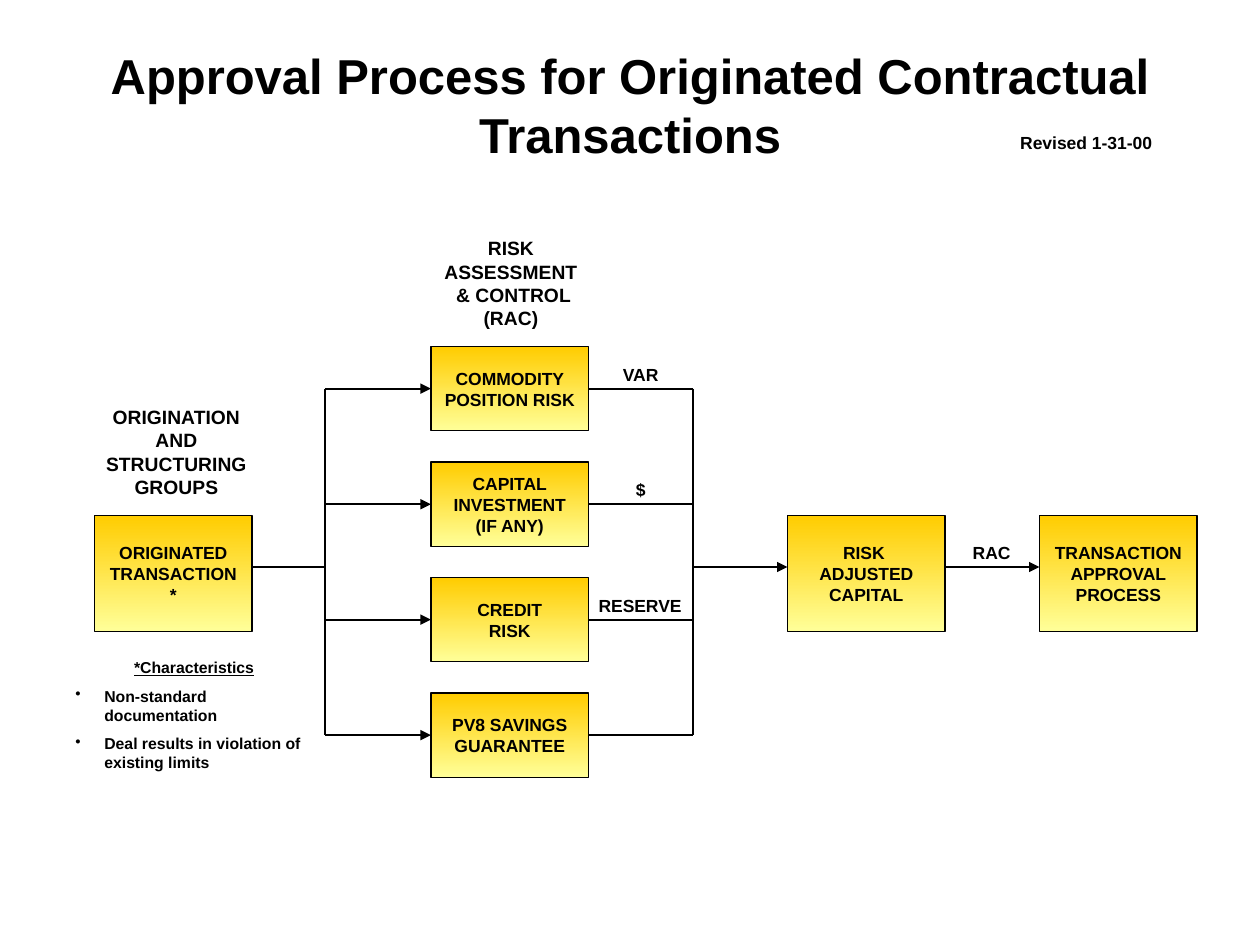
from dataclasses import dataclass

from lxml import etree
from pptx import Presentation
from pptx.dml.color import RGBColor
from pptx.enum.shapes import MSO_CONNECTOR, MSO_SHAPE
from pptx.enum.text import MSO_ANCHOR, MSO_AUTO_SIZE, PP_ALIGN
from pptx.oxml.ns import qn
from pptx.util import Inches, Pt

CENTER, LEFT = PP_ALIGN.CENTER, PP_ALIGN.LEFT
TOP, MIDDLE = MSO_ANCHOR.TOP, MSO_ANCHOR.MIDDLE
STRAIGHT = MSO_CONNECTOR.STRAIGHT
RECTANGLE = MSO_SHAPE.RECTANGLE
RIGHT_SIDE, LEFT_SIDE = 3, 1


@dataclass(frozen=True)
class Theme:
    font: str = "Arial"
    ink: RGBColor = RGBColor(0, 0, 0)
    box_top: RGBColor = RGBColor(0xFF, 0xCC, 0x00)
    box_bottom: RGBColor = RGBColor(0xFF, 0xFF, 0x99)
    title: Pt = Pt(28)
    heading: Pt = Pt(11)
    label: Pt = Pt(10)
    note: Pt = Pt(9)
    box_line: Pt = Pt(0.75)
    flow_line: Pt = Pt(1)


theme = Theme()


def write(shape, lines, size, anchor=TOP, wrap=True):
    """Fill a shape with bold centred lines, one paragraph each."""
    frame = shape.text_frame
    frame.text = "\n".join(lines)
    frame.word_wrap = wrap
    frame.auto_size = MSO_AUTO_SIZE.NONE
    frame.vertical_anchor = anchor
    for paragraph in frame.paragraphs:
        paragraph.alignment = CENTER
        paragraph.font.name = theme.font
        paragraph.font.size = size
        paragraph.font.bold = True
        paragraph.font.color.rgb = theme.ink
    return frame


def add_line(x1, y1, x2, y2, arrow=False):
    line = slide.shapes.add_connector(
        STRAIGHT, Inches(x1), Inches(y1), Inches(x2), Inches(y2))
    line.line.color.rgb = theme.ink
    line.line.width = theme.flow_line
    if arrow:
        etree.SubElement(line.line._ln, qn("a:tailEnd"), type="triangle")
    etree.SubElement(line._element.spPr, qn("a:effectLst"))
    return line


presentation = Presentation()
presentation.slide_width = Inches(10)
presentation.slide_height = Inches(7.5)
slide = presentation.slides.add_slide(presentation.slide_layouts[5])

# Title
title = slide.shapes.title
title.left, title.top = Inches(0.39), Inches(0.24)
title.width, title.height = Inches(9.22), Inches(1.18)
write(title, ["Approval Process for Originated Contractual Transactions"],
      theme.title, MIDDLE)

# Boxes: four risk rows between two buses, and three steps on the main line
BOX_WIDTH, RISK_HEIGHT, STEP_HEIGHT = 1.25, 0.67, 0.92
RISK_LEFT, RISK_TOP, RISK_PITCH = 3.42, 2.75, 2.75 / 3
STEP_TOP, FLOW_Y = 4.09, 4.5
LEFT_BUS, RIGHT_BUS = 2.58, 5.5

risks = [
    ["COMMODITY POSITION RISK"],
    ["CAPITAL", "INVESTMENT", "(IF ANY)"],
    ["CREDIT", "RISK"],
    ["PV8 SAVINGS GUARANTEE"],
]
steps = [
    (0.75, ["ORIGINATED", "TRANSACTION*"]),
    (6.25, ["RISK ", "ADJUSTED", "CAPITAL"]),
    (8.25, ["TRANSACTION", "APPROVAL", "PROCESS"]),
]
boxes = [(RISK_LEFT, RISK_TOP + row * RISK_PITCH, RISK_HEIGHT, lines)
         for row, lines in enumerate(risks)]
boxes += [(left, STEP_TOP, STEP_HEIGHT, lines) for left, lines in steps]

box_shapes = []
for left, top, height, lines in boxes:
    box = slide.shapes.add_shape(
        RECTANGLE, Inches(left), Inches(top), Inches(BOX_WIDTH), Inches(height))
    box.shadow.inherit = False
    box.fill.gradient()
    box.fill.gradient_angle = 270
    first_stop, last_stop = box.fill.gradient_stops
    first_stop.position, last_stop.position = 0, 1
    first_stop.color.rgb = theme.box_top
    last_stop.color.rgb = theme.box_bottom
    box.line.color.rgb = theme.ink
    box.line.width = theme.box_line
    write(box, lines, theme.label, MIDDLE)
    box_shapes.append(box)

# Flow lines
risk_shapes = box_shapes[:len(risks)]
risk_centers = [RISK_TOP + row * RISK_PITCH + RISK_HEIGHT / 2
                for row in range(len(risks))]
for box, y in zip(risk_shapes, risk_centers):
    inflow = add_line(LEFT_BUS, y, RISK_LEFT, y, arrow=True)
    inflow.end_connect(box, LEFT_SIDE)
    outflow = add_line(RISK_LEFT + BOX_WIDTH, y, RIGHT_BUS, y)
    outflow.begin_connect(box, RIGHT_SIDE)
for bus in (LEFT_BUS, RIGHT_BUS):
    add_line(bus, risk_centers[0], bus, risk_centers[-1])
add_line(2, FLOW_Y, LEFT_BUS, FLOW_Y)
add_line(RIGHT_BUS, FLOW_Y, 6.25, FLOW_Y, arrow=True)
add_line(7.5, FLOW_Y, 8.25, FLOW_Y, arrow=True)

# Headings and line labels
texts = [
    (3.36, 1.83, 1.39, 0.84, theme.heading,
     ["RISK ASSESSMENT", " & CONTROL", "(RAC)"]),
    (0.71, 3.17, 1.38, 0.84, theme.heading,
     ["ORIGINATION", "AND", "STRUCTURING", "GROUPS"]),
    (8, 1, 1.24, 0.27, theme.label, ["Revised 1-31-00"]),
    (4.67, 2.84, 0.83, 0.27, theme.label, ["VAR"]),
    (4.67, 3.75, 0.83, 0.27, theme.label, ["$"]),
    (4.58, 4.67, 1, 0.27, theme.label, ["RESERVE"]),
    (7.58, 4.25, 0.58, 0.27, theme.label, ["RAC"]),
]
for left, top, width, height, size, lines in texts:
    text_box = slide.shapes.add_textbox(
        Inches(left), Inches(top), Inches(width), Inches(height))
    write(text_box, lines, size, wrap=size == theme.heading)

# Footnote with bullets
footnote = slide.shapes.add_textbox(
    Inches(0.5), Inches(5.17), Inches(2.08), Inches(0.86))
heading, *bullets = write(footnote, [
    "*Characteristics",
    "Non-standard documentation",
    "Deal results in violation of existing limits",
], theme.note).paragraphs
heading.font.underline = True
for paragraph in bullets:
    paragraph.alignment = LEFT
    paragraph.space_before = Pt(5.6)
    properties = paragraph._p.get_or_add_pPr()
    properties.set("marL", str(Inches(0.23)))
    properties.set("indent", str(-Inches(0.23)))
    bullet = etree.Element(qn("a:buChar"), char="•")
    properties.find(qn("a:defRPr")).addprevious(bullet)

presentation.save("out.pptx")
